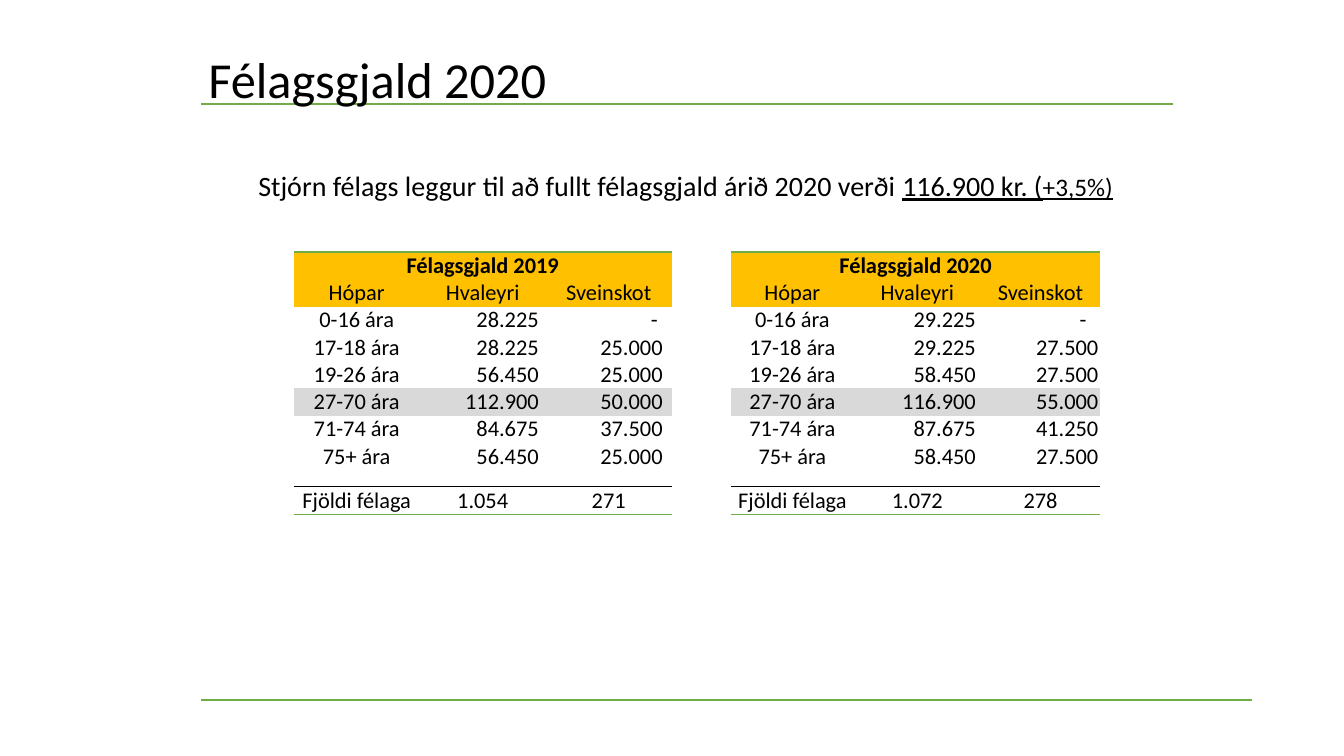
from lxml import etree
from pptx import Presentation
from pptx.dml.color import RGBColor
from pptx.enum.shapes import MSO_CONNECTOR
from pptx.enum.text import MSO_ANCHOR, PP_ALIGN
from pptx.oxml.ns import qn
from pptx.util import Pt

STRAIGHT = MSO_CONNECTOR.STRAIGHT
TOP, MIDDLE, BOTTOM = MSO_ANCHOR.TOP, MSO_ANCHOR.MIDDLE, MSO_ANCHOR.BOTTOM
CENTER, RIGHT = PP_ALIGN.CENTER, PP_ALIGN.RIGHT

GREEN = RGBColor(0x70, 0xAD, 0x47)
AMBER = RGBColor(0xFF, 0xC0, 0x00)
GREY = RGBColor(0xD9, 0xD9, 0xD9)
BLACK = RGBColor(0x00, 0x00, 0x00)

PLAIN_TABLE_STYLE = "{2D5ABB26-0587-4C30-8999-92F81FD0307C}"
ROW_HEIGHT, GAP_HEIGHT = 19.5, 12
HEADINGS = ("Hópar", "Hvaleyri", "Sveinskot")
AGE_GROUPS = ("0-16 ára", "17-18 ára", "19-26 ára", "27-70 ára", "71-74 ára", "75+ ára")
FULL_FEE_GROUP = "27-70 ára"
DASH_MARGIN = 10


class FeeSlide:
    font_name = "Calibri"

    def __init__(self, slide):
        self.slide = slide

    def style(self, paragraph, size, bold=False):
        font = paragraph.font
        font.name, font.size, font.bold = self.font_name, Pt(size), bold
        font.color.rgb = BLACK

    def rule(self, left, right, y):
        line = self.slide.shapes.add_connector(STRAIGHT, Pt(left), Pt(y), Pt(right), Pt(y))
        line.line.color.rgb = GREEN
        line.line.width = Pt(1.5)
        etree.SubElement(line._element.spPr, qn("a:effectLst"))

    def text(self, left, top, width, height, runs, size, anchor, inset):
        """Runs are (text, underlined, size or None) tuples."""
        frame = self.slide.shapes.add_textbox(Pt(left), Pt(top), Pt(width), Pt(height)).text_frame
        frame.word_wrap = True
        frame.vertical_anchor = anchor
        frame.margin_top = frame.margin_bottom = Pt(0)
        frame.margin_left = frame.margin_right = Pt(inset)
        paragraph = frame.paragraphs[0]
        paragraph.line_spacing = 0.9
        self.style(paragraph, size)
        for content, underlined, run_size in runs:
            run = paragraph.add_run()
            run.text = content
            if underlined:
                run.font.underline = True
            if run_size:
                run.font.size = Pt(run_size)

    def border(self, cell, sides):
        """Sides maps "T" and "B", in that order, to colours."""
        properties = cell._tc.get_or_add_tcPr()
        for position, (side, color) in enumerate(sides.items()):
            line = etree.Element(qn(f"a:ln{side}"), w=str(Pt(1)))
            fill = etree.SubElement(line, qn("a:solidFill"))
            etree.SubElement(fill, qn("a:srgbClr"), val=str(color))
            properties.insert(position, line)

    def cell(self, cell, content, fill=None, sides=None, align=CENTER, margin=0, bold=False):
        cell.margin_left = cell.margin_top = cell.margin_bottom = Pt(0)
        cell.margin_right = Pt(margin)
        cell.vertical_anchor = BOTTOM
        if fill is None:
            cell.fill.background()
        else:
            cell.fill.solid()
            cell.fill.fore_color.rgb = fill
        self.border(cell, sides or {})
        paragraph = cell.text_frame.paragraphs[0]
        paragraph.alignment = align
        if content:
            paragraph.add_run().text = content
            self.style(paragraph, 16, bold)
        else:
            etree.SubElement(paragraph._p, qn("a:endParaRPr"), sz="600")

    def fee_table(self, left, widths, margins, title, fees, members):
        gap_row = 2 + len(AGE_GROUPS)
        row_count = gap_row + 2
        height = ROW_HEIGHT * (row_count - 1) + GAP_HEIGHT
        table = self.slide.shapes.add_table(
            row_count, len(widths), Pt(left), Pt(180), Pt(sum(widths)), Pt(height)).table
        table.first_row = table.horz_banding = False
        table._tbl.tblPr.find(qn("a:tableStyleId")).text = PLAIN_TABLE_STYLE
        for column, width in zip(table.columns, widths):
            column.width = Pt(width)
        for index, row in enumerate(table.rows):
            row.height = Pt(GAP_HEIGHT if index == gap_row else ROW_HEIGHT)

        totals = ("Fjöldi félaga",) + members
        for col, heading in enumerate(HEADINGS):
            self.cell(table.cell(0, col), "" if col else title, AMBER, {"T": GREEN}, bold=True)
            self.cell(table.cell(1, col), heading, AMBER)
            self.cell(table.cell(gap_row, col), "", sides={"B": BLACK})
            self.cell(table.cell(gap_row + 1, col), totals[col], sides={"T": BLACK, "B": GREEN})
        table.cell(0, 0).merge(table.cell(0, len(widths) - 1))

        for row, (group, amounts) in enumerate(zip(AGE_GROUPS, fees), start=2):
            fill = GREY if group == FULL_FEE_GROUP else None
            self.cell(table.cell(row, 0), group, fill)
            for col, amount in enumerate(amounts, start=1):
                margin = DASH_MARGIN if amount == "-" else margins[col - 1]
                self.cell(table.cell(row, col), amount, fill, align=RIGHT, margin=margin)


def main():
    deck = Presentation()
    deck.slide_width, deck.slide_height = Pt(960), Pt(540)
    page = FeeSlide(deck.slides.add_slide(deck.slide_layouts[6]))

    page.rule(143.5, 838, 74)
    page.rule(143.5, 894, 500)
    page.text(141.8, 28.8, 752.4, 60.5, [("Félagsgjald 2020", False, None)], 36, MIDDLE, 7.2)
    page.text(179.5, 123, 630, 42, [
        ("Stjórn félags leggur til að fullt félagsgjald árið 2020 verði ", False, None),
        ("116.900 kr. (", True, None),
        ("+3,5%)", True, 18),
    ], 20, TOP, 5)

    page.fee_table(
        522, (88, 90.5, 85.5), (3.5, 1.5), "Félagsgjald 2020",
        [("29.225", "-"), ("29.225", "27.500"), ("58.450", "27.500"),
         ("116.900", "55.000"), ("87.675", "41.250"), ("58.450", "27.500")],
        ("1.072", "278"))
    page.fee_table(
        209.8, (90, 90, 90), (5, 6.5), "Félagsgjald 2019",
        [("28.225", "-"), ("28.225", "25.000"), ("56.450", "25.000"),
         ("112.900", "50.000"), ("84.675", "37.500"), ("56.450", "25.000")],
        ("1.054", "271"))

    deck.save("out.pptx")


if __name__ == "__main__":
    main()
